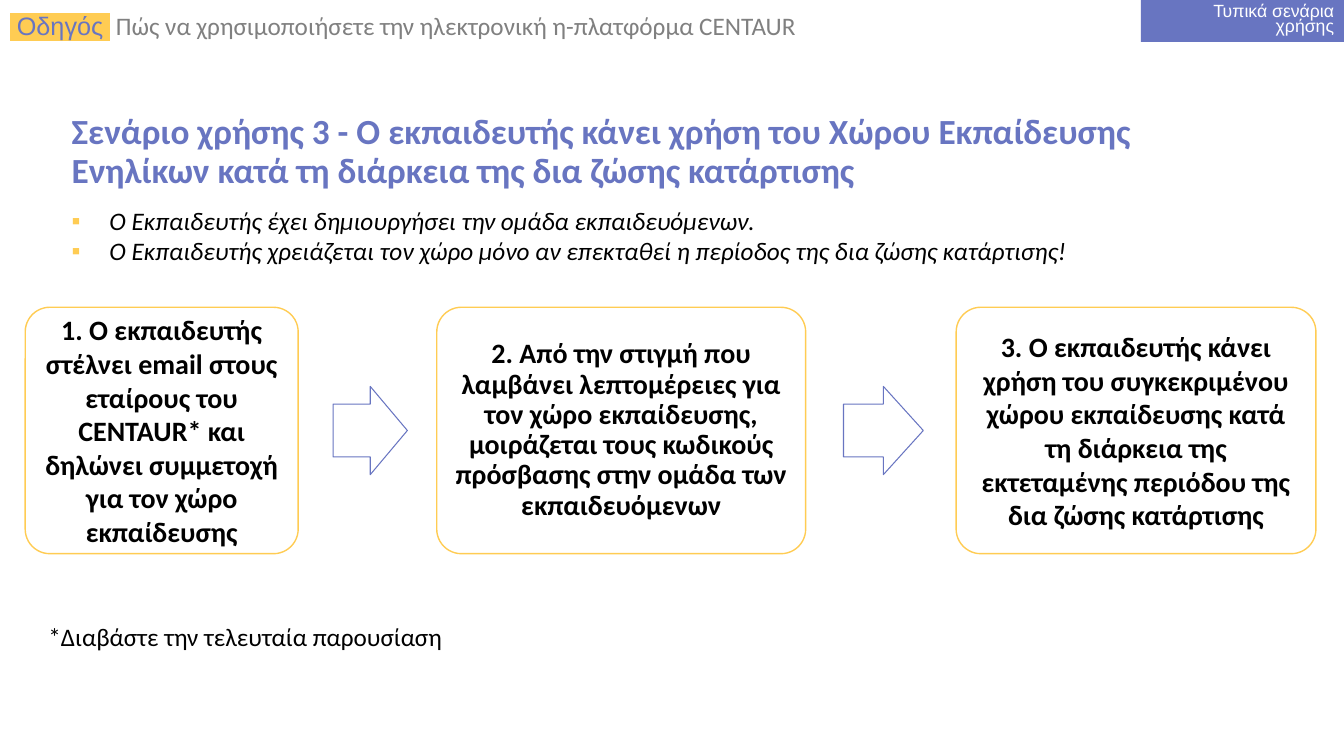
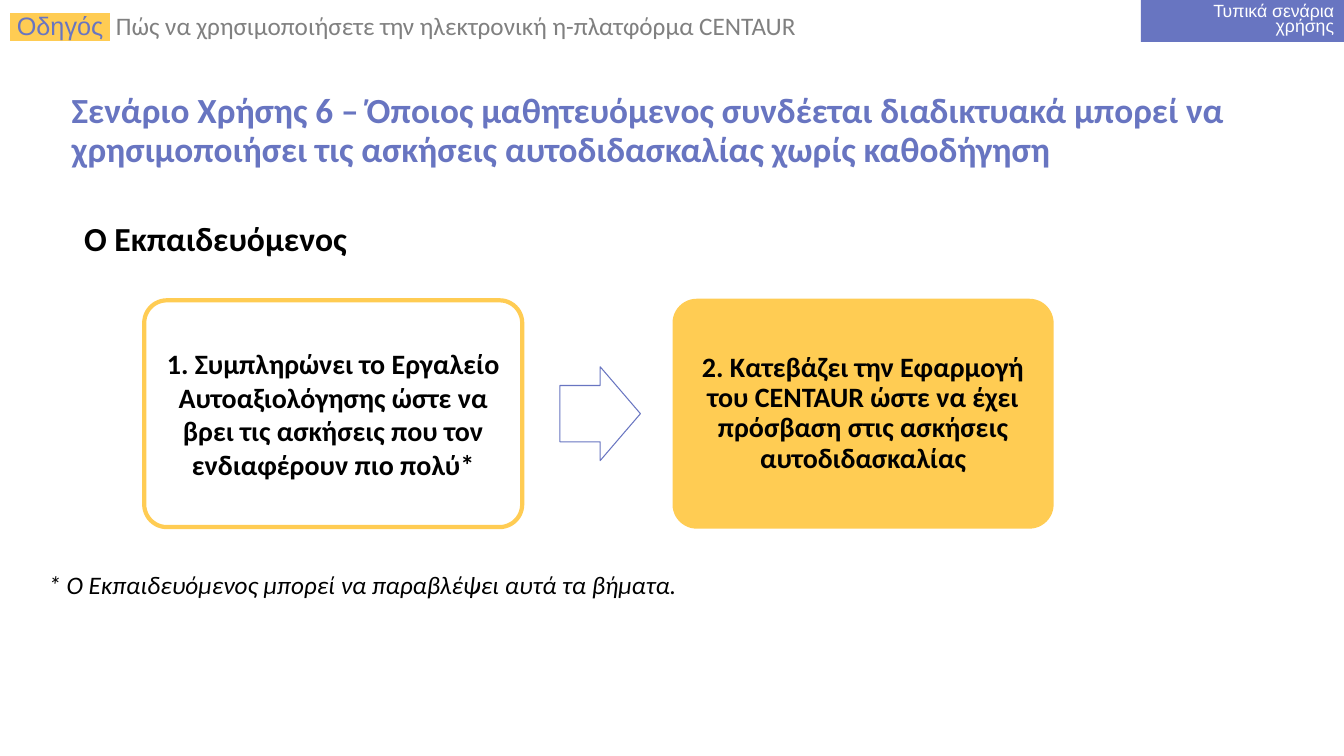
"""Build two CENTAUR usage-scenario slides with step flows."""
from dataclasses import dataclass
from typing import Optional

from lxml import etree
from pptx import Presentation
from pptx.dml.color import RGBColor
from pptx.enum.shapes import MSO_SHAPE
from pptx.enum.text import MSO_ANCHOR, MSO_AUTO_SIZE, PP_ALIGN
from pptx.oxml.ns import qn
from pptx.util import Pt

RECT = MSO_SHAPE.RECTANGLE
ROUND_RECT = MSO_SHAPE.ROUNDED_RECTANGLE
ARROW = MSO_SHAPE.RIGHT_ARROW
MIDDLE, TOP = MSO_ANCHOR.MIDDLE, MSO_ANCHOR.TOP
NO_AUTOFIT = MSO_AUTO_SIZE.NONE
LEFT, CENTER, RIGHT = PP_ALIGN.LEFT, PP_ALIGN.CENTER, PP_ALIGN.RIGHT

BLUE, YELLOW, GRAY = "6875C1", "FFCC53", "808080"
BLACK, WHITE = "000000", "FFFFFF"
BODY_FONT, LABEL_FONT = "Calibri", "Arial"
SLIDE_W, SLIDE_H = 960, 540
TITLE_ONLY, TITLE_AND_BODY = 5, 1


@dataclass
class Step:
    left: float
    width: float
    text: str
    spacing: float = 1.0
    line_width: float = 1
    fill: Optional[str] = None


@dataclass
class Arrow:
    left: float
    width: float


@dataclass
class Flow:
    top: float
    height: float
    arrow_height: float
    steps: list[Step]
    arrows: list[Arrow]


@dataclass
class Note:
    left: float
    top: float
    text: str
    size: float = 18
    bold: bool = False
    italic: bool = False


@dataclass
class Scenario:
    title: str
    title_top: float
    flow: Flow
    notes: list[Note]
    bullets: tuple[str, ...] = ()


SCENARIOS = [
    Scenario(
        "Σενάριο χρήσης 3 - Ο εκπαιδευτής κάνει χρήση του Χώρου Εκπαίδευσης "
        "Ενηλίκων κατά τη διάρκεια της δια ζώσης κατάρτισης",
        85,
        Flow(219.5, 176, 63, [
            Step(18, 195, "1. Ο εκπαιδευτής στέλνει email στους εταίρους του CENTAUR* "
                 "και δηλώνει συμμετοχή για τον χώρο εκπαίδευσης"),
            Step(312, 263.5, "2. Από την στιγμή που λαμβάνει λεπτομέρειες για τον χώρο "
                 "εκπαίδευσης, μοιράζεται τους κωδικούς πρόσβασης στην ομάδα των "
                 "εκπαιδευόμενων", 0.9),
            Step(683, 257, "3. Ο εκπαιδευτής κάνει χρήση του συγκεκριμένου χώρου "
                 "εκπαίδευσης κατά τη διάρκεια της εκτεταμένης περιόδου της "
                 "δια ζώσης κατάρτισης"),
        ], [Arrow(238, 53), Arrow(602.5, 57)]),
        [Note(27.5, 440.5, "*Διαβάστε την τελευταία παρουσίαση")],
        ("Ο Εκπαιδευτής έχει δημιουργήσει την ομάδα εκπαιδευόμενων.",
         "Ο Εκπαιδευτής χρειάζεται τον χώρο μόνο αν επεκταθεί η περίοδος "
         "της δια ζώσης κατάρτισης!"),
    ),
    Scenario(
        "Σενάριο Χρήσης 6 – Όποιος μαθητευόμενος συνδέεται διαδικτυακά μπορεί να "
        "χρησιμοποιήσει τις ασκήσεις αυτοδιδασκαλίας χωρίς καθοδήγηση",
        70,
        Flow(214.5, 162, 67, [
            Step(103, 270, "1. Συμπληρώνει το Εργαλείο Αυτοαξιολόγησης ώστε να βρει "
                 "τις ασκήσεις που τον ενδιαφέρουν πιο πολύ*", line_width=3),
            Step(481.5, 270, "2. Κατεβάζει την Εφαρμογή του CENTAUR ώστε να έχει "
                 "πρόσβαση στις ασκήσεις αυτοδιδασκαλίας", 0.9, 2.25, YELLOW),
        ], [Arrow(400, 57.5)]),
        [Note(53, 152, "Ο Εκπαιδευόμενος", 24, bold=True),
         Note(27.5, 403, "* Ο Εκπαιδευόμενος μπορεί να παραβλέψει αυτά τα βήματα.",
              italic=True)],
    ),
]


def rgb(color: str) -> RGBColor:
    """Turn a hex string into a colour."""
    return RGBColor.from_string(color)


def style(font, size: float, color: str, name: str = BODY_FONT,
          bold: bool = False, italic: bool = False) -> None:
    """Format a font."""
    font.size, font.name = Pt(size), name
    font.bold, font.italic = bold, italic
    font.color.rgb = rgb(color)


def place(sp, left: float, top: float, width: float, height: float) -> None:
    """Move and size a shape."""
    sp.left, sp.top, sp.width, sp.height = Pt(left), Pt(top), Pt(width), Pt(height)


def add_shape(s, kind, left: float, top: float, width: float, height: float,
              fill: Optional[str] = None, line: Optional[str] = None,
              line_width: float = 0.75):
    """Add a flat preset shape."""
    sp = s.shapes.add_shape(kind, Pt(left), Pt(top), Pt(width), Pt(height))
    sp.shadow.inherit = False
    for part, color in ((sp.fill, fill), (sp.line.fill, line)):
        if color:
            part.solid()
            part.fore_color.rgb = rgb(color)
        else:
            part.background()
    if line:
        sp.line.width = Pt(line_width)
    return sp


def add_textbox(s, left: float, top: float, width: float, height: float):
    """Add a wrapping text box and return its text frame."""
    tf = s.shapes.add_textbox(Pt(left), Pt(top), Pt(width), Pt(height)).text_frame
    tf.word_wrap = True
    return tf


def highlight(r, color: str) -> None:
    """Put a highlight behind a coloured run."""
    mark = etree.Element(qn("a:highlight"))
    etree.SubElement(mark, qn("a:srgbClr"), val=color)
    r._r.get_or_add_rPr().find(qn("a:solidFill")).addnext(mark)


def add_bullet(p) -> None:
    """Give a paragraph a yellow square bullet and a hanging indent."""
    pPr = p._p.get_or_add_pPr()
    indent = Pt(27)
    pPr.set("marL", str(indent))
    pPr.set("indent", str(-indent))
    color = etree.SubElement(pPr, qn("a:buClr"))
    etree.SubElement(color, qn("a:srgbClr"), val=YELLOW)
    etree.SubElement(pPr, qn("a:buFont"), typeface=LABEL_FONT)
    etree.SubElement(pPr, qn("a:buChar"), char="▪")


def add_header(s) -> None:
    """Draw the guide heading and the corner label."""
    p = add_textbox(s, 0, 8, 685, 25).paragraphs[0]
    p.line_spacing = 0.8
    for text, color, name in ((" Οδηγός ", BLUE, LABEL_FONT),
                              (" Πώς να χρησιμοποιήσετε την ηλεκτρονική "
                               "η-πλατφόρμα CENTAUR", GRAY, BODY_FONT)):
        r = p.add_run()
        r.text = text
        style(r.font, 18, color, name)
    highlight(p.runs[0], YELLOW)

    tf = add_shape(s, RECT, SLIDE_W - 145, 0, 145, 30, BLUE).text_frame
    tf.word_wrap, tf.vertical_anchor = True, MIDDLE
    tf.margin_left = Pt(14)
    tf.text = "Τυπικά σενάρια χρήσης"
    p = tf.paragraphs[0]
    p.alignment, p.line_spacing = RIGHT, 0.7
    style(p.runs[0].font, 12.6, WHITE, LABEL_FONT)


def add_title(s, text: str, top: float) -> None:
    """Fill the title placeholder."""
    sp = s.shapes.title
    place(sp, 44, top, 871, 48)
    tf = sp.text_frame
    tf.text = text
    tf.word_wrap, tf.auto_size, tf.vertical_anchor = True, NO_AUTOFIT, MIDDLE
    p = tf.paragraphs[0]
    p.alignment, p.line_spacing = LEFT, 0.9
    style(p.runs[0].font, 25.2, BLUE, bold=True)


def add_bullets(s, lines: tuple[str, ...]) -> None:
    """Fill the body placeholder with a bulleted list."""
    sp = s.placeholders[1]
    place(sp, 44, 143, 749, 51)
    tf = sp.text_frame
    tf.text = "\n".join(lines)
    tf.word_wrap, tf.auto_size, tf.vertical_anchor = True, NO_AUTOFIT, TOP
    for p in tf.paragraphs:
        add_bullet(p)
        p.space_before = Pt(0)
        style(p.runs[0].font, 18, BLACK, italic=True)


def add_step(s, flow: Flow, step: Step) -> None:
    """Draw one rounded step box."""
    sp = add_shape(s, ROUND_RECT, step.left, flow.top, step.width, flow.height,
                   step.fill, YELLOW, step.line_width)
    sp.adjustments[0] = 0.1
    tf = sp.text_frame
    tf.word_wrap, tf.vertical_anchor = True, MIDDLE
    tf.margin_left = tf.margin_right = tf.margin_top = tf.margin_bottom = Pt(5.75)
    tf.text = step.text
    p = tf.paragraphs[0]
    p.alignment, p.line_spacing = CENTER, step.spacing
    style(p.runs[0].font, 20, BLACK, bold=True)


def add_flow(s, flow: Flow) -> None:
    """Draw the steps and the arrows centred on their height."""
    for step in flow.steps:
        add_step(s, flow, step)
    arrow_top = flow.top + (flow.height - flow.arrow_height) / 2
    for arrow in flow.arrows:
        sp = add_shape(s, ARROW, arrow.left, arrow_top, arrow.width,
                       flow.arrow_height, line=BLUE)
        sp.adjustments[0], sp.adjustments[1] = 0.6, 0.5


def add_note(s, note: Note) -> None:
    """Add a single line of plain text."""
    tf = add_textbox(s, note.left, note.top, 482, note.size * 1.2 + 7.2)
    tf.text = note.text
    style(tf.paragraphs[0].runs[0].font, note.size, BLACK,
          bold=note.bold, italic=note.italic)


def add_scenario(prs, scenario: Scenario) -> None:
    """Add one scenario slide."""
    layout = TITLE_AND_BODY if scenario.bullets else TITLE_ONLY
    s = prs.slides.add_slide(prs.slide_layouts[layout])
    add_header(s)
    add_title(s, scenario.title, scenario.title_top)
    if scenario.bullets:
        add_bullets(s, scenario.bullets)
    add_flow(s, scenario.flow)
    for note in scenario.notes:
        add_note(s, note)


def main() -> None:
    """Build and save the presentation."""
    prs = Presentation()
    prs.slide_width, prs.slide_height = Pt(SLIDE_W), Pt(SLIDE_H)
    for scenario in SCENARIOS:
        add_scenario(prs, scenario)
    prs.save("out.pptx")


if __name__ == "__main__":
    main()
